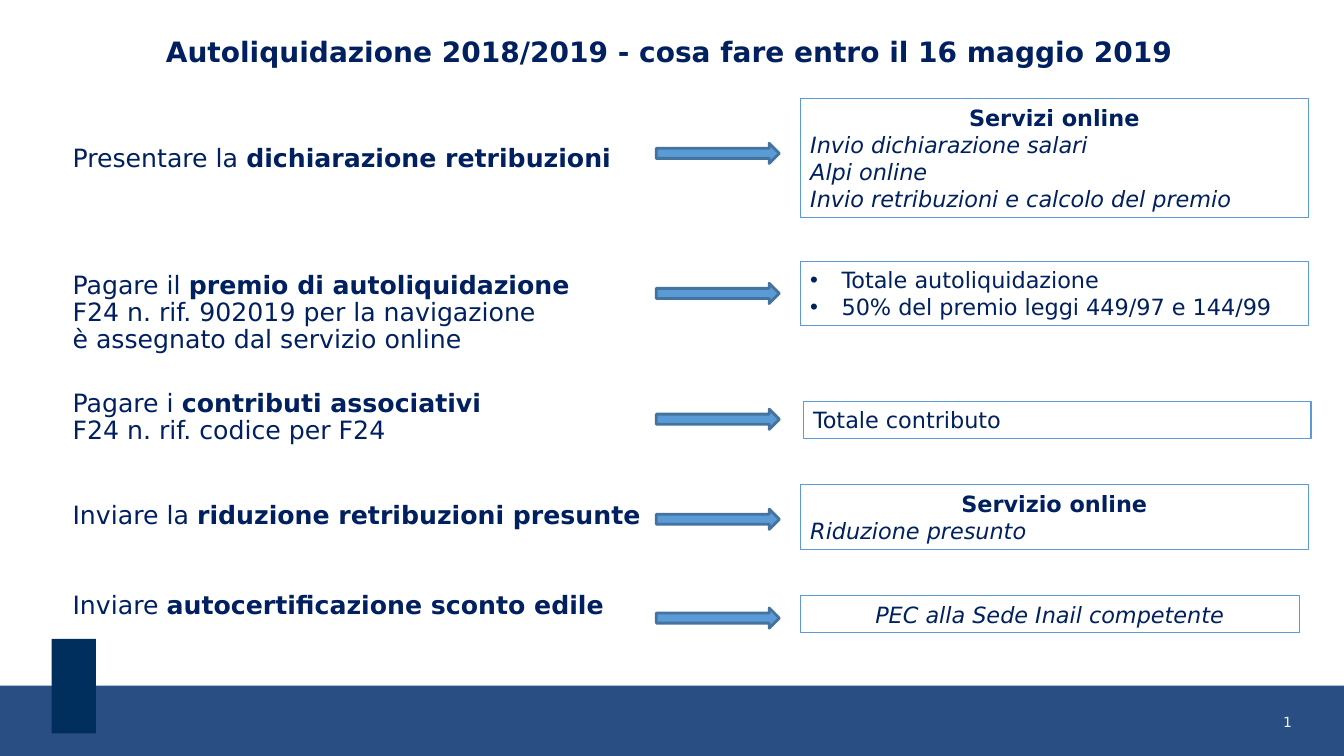
from dataclasses import dataclass

from lxml import etree
from pptx import Presentation
from pptx.dml.color import RGBColor
from pptx.enum.shapes import MSO_SHAPE
from pptx.enum.text import MSO_ANCHOR, PP_ALIGN
from pptx.oxml.ns import qn
from pptx.util import Cm, Pt

RECTANGLE = MSO_SHAPE.RECTANGLE
RIGHT_ARROW = MSO_SHAPE.RIGHT_ARROW
LEFT, CENTER, RIGHT = PP_ALIGN.LEFT, PP_ALIGN.CENTER, PP_ALIGN.RIGHT
TOP, MIDDLE = MSO_ANCHOR.TOP, MSO_ANCHOR.MIDDLE

FONT = "DejaVu Sans"
COLORS = {
    "navy": "002060",
    "band": "284E83",
    "tab": "002E5D",
    "number": "F2F2F2",
    "arrow": "5B9BD5",
    "arrow_edge": "43739E",
}
ARROW_LEFT, ARROW_WIDTH, ARROW_HEIGHT = 16.54, 3.1, 0.51
TASK_LEFT, TASK_WIDTH, TASK_LINE = 1.83, 14.6, 0.67
BULLET_INDENT = 0.79


@dataclass
class Line:
    plain: str = ""
    bold: str = ""
    italic: bool = False
    align: int = LEFT
    bullet: bool = False


@dataclass
class Area:
    left: float
    top: float
    width: float
    height: float

    def lengths(self) -> list:
        return [Cm(n) for n in (self.left, self.top, self.width, self.height)]


@dataclass
class Step:
    task_top: float
    task: list[Line]
    arrow_top: float
    service_area: Area
    service: list[Line]


STEPS = [
    Step(3.67, [Line("Presentare la ", "dichiarazione retribuzioni")], 3.61,
         Area(20.17, 2.49, 12.8, 3),
         [Line(bold="Servizi online", align=CENTER),
          Line("Invio dichiarazione salari", italic=True),
          Line("Alpi online", italic=True),
          Line("Invio retribuzioni e calcolo del premio", italic=True)]),
    Step(6.87, [Line("Pagare il ", "premio di autoliquidazione"),
                Line("F24 n. rif. 902019 per la navigazione"),
                Line("è assegnato dal servizio online")], 7.14,
         Area(20.17, 6.58, 12.8, 1.63),
         [Line("Totale autoliquidazione", bullet=True),
          Line("50% del premio leggi 449/97 e 144/99", bullet=True)]),
    Step(9.84, [Line("Pagare i ", "contributi associativi"),
                Line("F24 n. rif. codice per F24")], 10.31,
         Area(20.24, 10.11, 12.8, 0.94),
         [Line("Totale contributo")]),
    Step(12.66, [Line("Inviare la ", "riduzione retribuzioni presunte")], 12.83,
         Area(20.17, 12.22, 12.8, 1.63),
         [Line(bold="Servizio online", align=CENTER),
          Line("Riduzione presunto", italic=True)]),
    Step(14.93, [Line("Inviare ", "autocertificazione sconto edile")], 15.32,
         Area(20.17, 15.01, 12.57, 0.94),
         [Line("PEC alla Sede Inail competente", italic=True, align=CENTER)]),
]


def rgb(name: str) -> RGBColor:
    return RGBColor.from_string(COLORS[name])


def add_block(slide, kind: int, area: Area, fill: str = "", edge: str = "",
              edge_width: float = 0.75):
    block = slide.shapes.add_shape(kind, *area.lengths())
    block.shadow.inherit = False
    if fill:
        block.fill.solid()
        block.fill.fore_color.rgb = rgb(fill)
    else:
        block.fill.background()
    if edge:
        block.line.color.rgb = rgb(edge)
        block.line.width = Pt(edge_width)
    else:
        block.line.fill.background()
    return block


def add_bullet(paragraph) -> None:
    properties = paragraph._p.get_or_add_pPr()
    properties.set("marL", str(Cm(BULLET_INDENT)))
    properties.set("indent", str(-Cm(BULLET_INDENT)))
    etree.SubElement(properties, qn("a:buFont"), typeface="Arial")
    etree.SubElement(properties, qn("a:buChar"), char="•")


def write_lines(frame, lines: list[Line], size: int, spacing: float = 1.0) -> None:
    frame.word_wrap = True
    for index, line in enumerate(lines):
        paragraph = frame.add_paragraph() if index else frame.paragraphs[0]
        paragraph.alignment = line.align
        paragraph.line_spacing = spacing
        if line.bullet:
            add_bullet(paragraph)
        for text, bold in ((line.plain, False), (line.bold, True)):
            if text:
                run = paragraph.add_run()
                run.text = text
                run.font.name = FONT
                run.font.size = Pt(size)
                run.font.bold = bold
                run.font.italic = line.italic
                run.font.color.rgb = rgb("navy")


def add_text(slide, area: Area, lines: list[Line], size: int):
    frame = slide.shapes.add_textbox(*area.lengths()).text_frame
    frame.margin_left = frame.margin_right = 0
    frame.margin_top = frame.margin_bottom = 0
    frame.vertical_anchor = TOP
    write_lines(frame, lines, size, 0.9)
    return frame


def add_slide_number(slide, area: Area) -> None:
    paragraph = add_text(slide, area, [Line("2", align=RIGHT)], 10).paragraphs[0]
    paragraph.line_spacing = 1.0
    run = paragraph.runs[0]
    run.font.color.rgb = rgb("number")
    # Turn the run into a live slide number field
    field = etree.Element(qn("a:fld"), type="slidenum",
                          id="{B6F15528-21DE-4FAA-801E-634DDDAF4B2B}")
    run._r.addprevious(field)
    field.extend(list(run._r))
    paragraph._p.remove(run._r)


def add_step(slide, step: Step) -> None:
    task_area = Area(TASK_LEFT, step.task_top, TASK_WIDTH, TASK_LINE * len(step.task))
    add_text(slide, task_area, step.task, 18)
    add_block(slide, RIGHT_ARROW,
              Area(ARROW_LEFT, step.arrow_top, ARROW_WIDTH, ARROW_HEIGHT),
              "arrow", "arrow_edge", 2)
    service = add_block(slide, RECTANGLE, step.service_area, edge="arrow")
    service.text_frame.vertical_anchor = MIDDLE
    write_lines(service.text_frame, step.service, 16)


def main() -> None:
    deck = Presentation()
    deck.slide_width, deck.slide_height = Cm(33.87), Cm(19.05)
    slide = deck.slides.add_slide(deck.slide_layouts[6])

    # Footer
    add_block(slide, RECTANGLE, Area(0, 17.28, 33.87, 1.77), "band")
    add_block(slide, RECTANGLE, Area(1.3, 16.1, 1.12, 2.38), "tab")
    add_slide_number(slide, Area(28.52, 17.98, 4.04, 1.02))

    # Title
    title = Line(bold="Autoliquidazione 2018/2019 - cosa fare entro il 16 maggio 2019",
                 align=CENTER)
    add_text(slide, Area(1.27, 0.97, 31.2, 0.8), [title], 20)

    # Tasks, arrows and services
    for step in STEPS:
        add_step(slide, step)

    deck.save("out.pptx")


if __name__ == "__main__":
    main()
